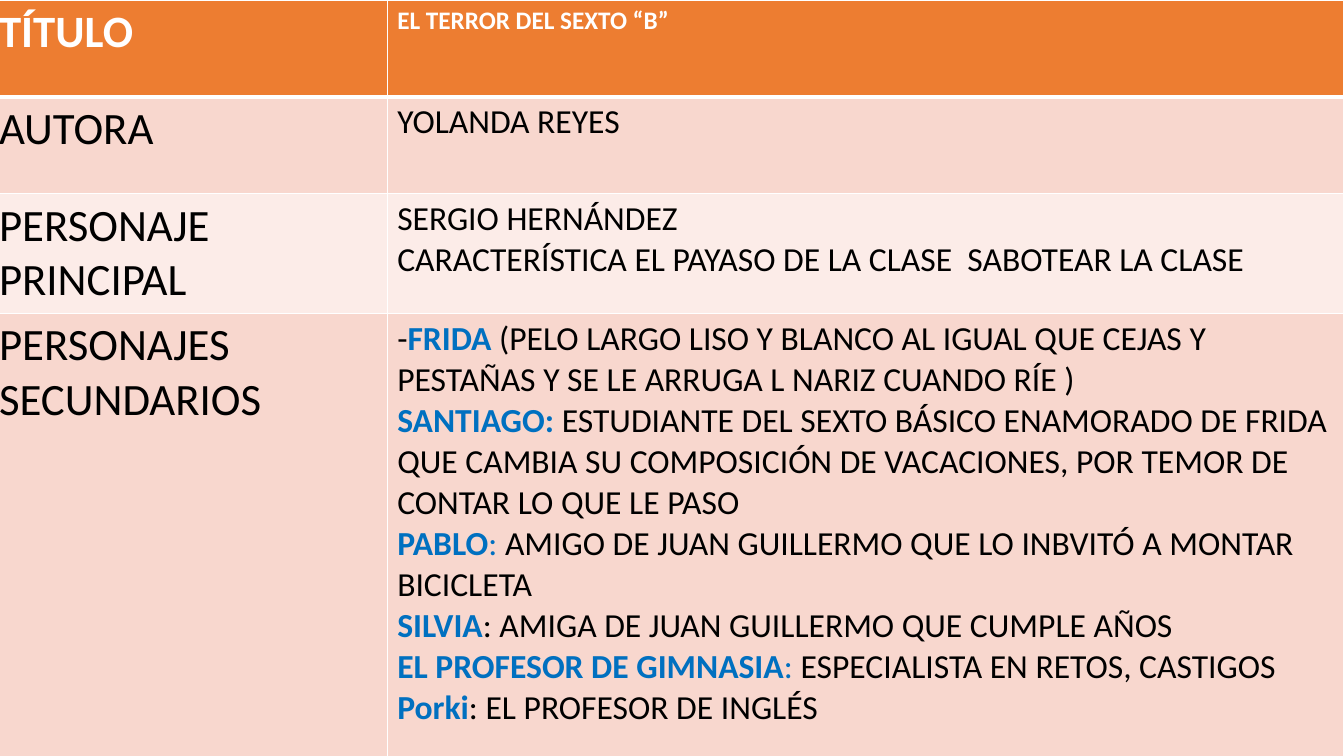
from pptx import Presentation
from pptx.dml.color import RGBColor
from pptx.oxml.ns import qn
from pptx.util import Inches, Pt
from lxml.etree import SubElement

COLORS = {
    "back": "F4B183", "head": "ED7D31", "dark": "F8D7CE", "light": "FCECE8",
    "white": "FFFFFF", "black": "000000", "blue": "0070C0",
}

# Each paragraph is a list of runs: text, color, bold
ROWS = [
    ("head", [("TÍTULO", "white", True)],
     [[("EL TERROR DEL SEXTO “B”", "white", True)]]),
    ("dark", [("AUTORA", "black", False)],
     [[("YOLANDA REYES", "black", False)]]),
    ("light", [("PERSONAJE PRINCIPAL", "black", False)],
     [[("SERGIO HERNÁNDEZ", "black", False)],
      [("CARACTERÍSTICA EL PAYASO DE LA CLASE  SABOTEAR LA CLASE", "black", False)]]),
    ("dark", [("PERSONAJES SECUNDARIOS", "black", False)],
     [[("-", "black", False), ("FRIDA ", "blue", True),
       ("(PELO LARGO LISO Y BLANCO AL IGUAL QUE CEJAS Y PESTAÑAS "
        "Y SE LE ARRUGA L NARIZ CUANDO RÍE )", "black", False)],
      [("SANTIAGO: ", "blue", True),
       ("ESTUDIANTE DEL SEXTO BÁSICO ENAMORADO DE FRIDA QUE CAMBIA SU COMPOSICIÓN "
        "DE VACACIONES, POR TEMOR DE CONTAR LO QUE LE PASO", "black", False)],
      [("PABLO", "blue", True), (":", "blue", False),
       (" AMIGO DE JUAN GUILLERMO QUE LO INBVITÓ A MONTAR BICICLETA", "black", False)],
      [("SILVIA", "blue", True),
       (": AMIGA DE JUAN GUILLERMO QUE CUMPLE AÑOS", "black", False)],
      [("EL PROFESOR DE GIMNASIA", "blue", True), (":", "blue", False),
       (" ESPECIALISTA EN RETOS, CASTIGOS", "black", False)],
      [("Porki", "blue", True), (": EL PROFESOR DE INGLÉS", "black", False)]]),
]


def rgb(name):
    return RGBColor.from_string(COLORS[name])


def style_cell(cell, fill, widths):
    """Fill the cell and draw white borders; widths maps a side to points."""
    props = cell._tc.get_or_add_tcPr()
    for side, width in widths.items():
        line = SubElement(props, qn(f"a:ln{side}"), w=str(Pt(width)))
        paint = SubElement(line, qn("a:solidFill"))
        SubElement(paint, qn("a:srgbClr"), val=COLORS["white"])
    cell.fill.solid()
    cell.fill.fore_color.rgb = rgb(fill)


prs = Presentation()
prs.slide_width, prs.slide_height = Inches(13.33), Inches(7.5)
slide = prs.slides.add_slide(prs.slide_layouts[6])
slide.background.fill.solid()
slide.background.fill.fore_color.rgb = rgb("back")

table = slide.shapes.add_table(
    len(ROWS), 2, Inches(-0.11), 0, Inches(13.44), Inches(7.5)).table
for column, width in zip(table.columns, (3.95, 9.49)):
    column.width = Inches(width)
for row, height in zip(table.rows, (0.96, 0.96, 0.96, 4.62)):
    row.height = Inches(height)

for index, (fill, label, details) in enumerate(ROWS):
    top = 3 if index == 1 else 1
    bottom = 3 if index == 0 else 1
    detail_size = 18 if index == 0 else 24
    for col, (paras, size) in enumerate([([label], 32), (details, detail_size)]):
        cell = table.cell(index, col)
        style_cell(cell, fill, {"L": 1, "R": 1, "T": top, "B": bottom})
        frame = cell.text_frame
        for number, runs in enumerate(paras):
            para = frame.add_paragraph() if number else frame.paragraphs[0]
            for text, color, bold in runs:
                run = para.add_run()
                run.text = text
                run.font.name = "Calibri"
                run.font.size = Pt(size)
                run.font.bold = bold
                run.font.color.rgb = rgb(color)

prs.save("out.pptx")
